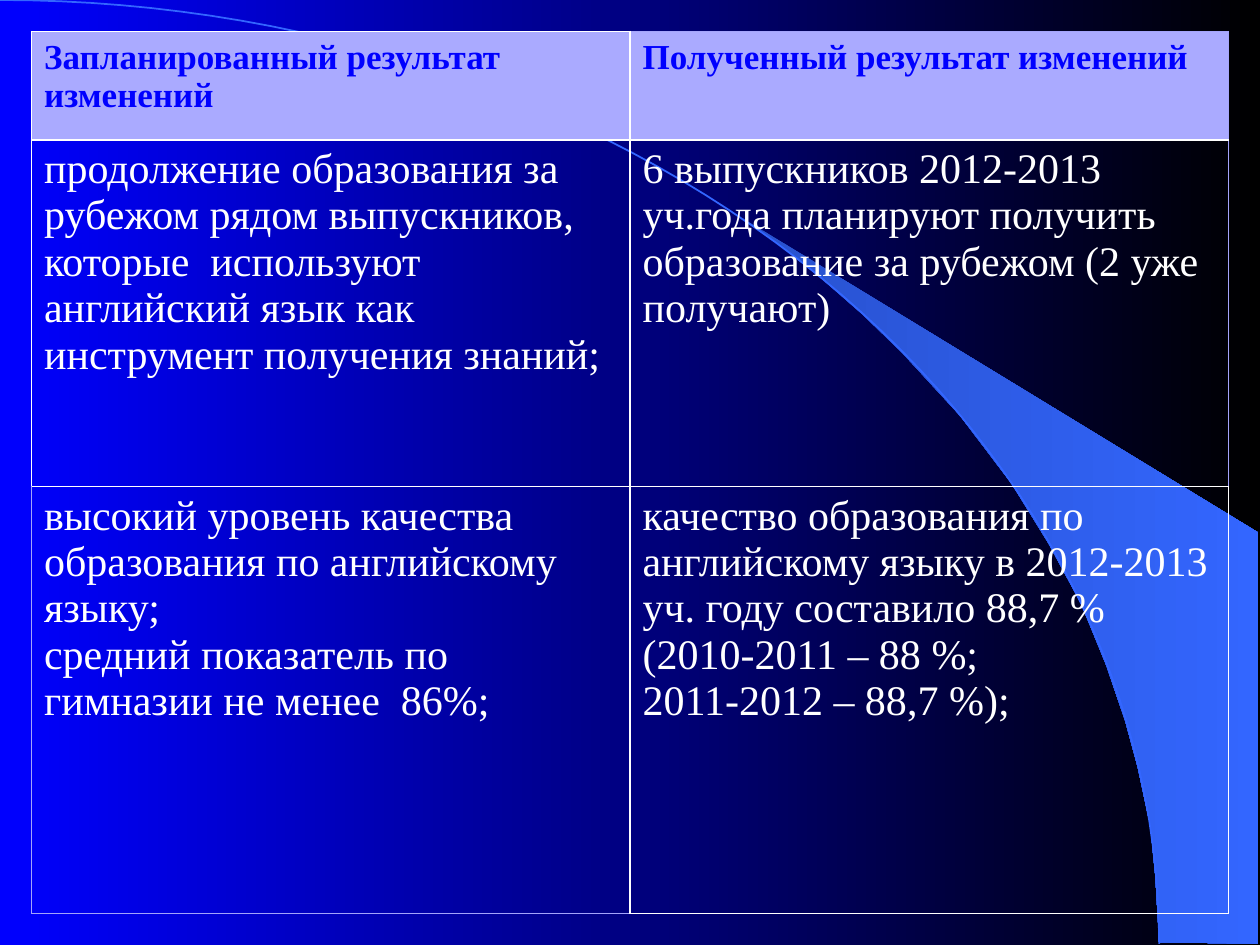
import math

from lxml import etree
from pptx import Presentation
from pptx.dml.color import RGBColor
from pptx.oxml.ns import qn
from pptx.util import Inches, Pt

BLANK_LAYOUT = 6
FONT = "Times New Roman"
COLORS = {
    "blue": "0000FF",
    "black": "000000",
    "white": "FFFFFF",
    "arc": "3366FF",
    "wing": "2851CC",
    "header": "AAAAFF",
    "edge": "A4A4FB",
}

WING = [
    (9.2, 7.48), (9.99, 7.49), (9.99, 4.23), (5.89, 1.73), (6.24, 1.99),
    (6.53, 2.22), (6.85, 2.5), (7.16, 2.8), (7.62, 3.3), (8.03, 3.84),
    (8.32, 4.31), (8.58, 4.79), (8.78, 5.28), (8.93, 5.72), (9.03, 6.09),
    (9.13, 6.56), (9.17, 6.96),
]
ARC_WIDTH, ARC_HEIGHT, ARC_STEPS = 9.2, 7.49, 60

# Each cell is a list of paragraphs
ROWS = [
    [
        ["Запланированный результат изменений"],
        ["Полученный результат изменений"],
    ],
    [
        ["продолжение образования за рубежом рядом выпускников, которые  "
         "используют английский язык как инструмент получения знаний;"],
        ["6 выпускников 2012-2013 уч.года планируют получить образование "
         "за рубежом (2 уже получают)"],
    ],
    [
        ["высокий уровень качества образования по английскому языку;",
         "средний показатель по гимназии не менее  86%;"],
        ["качество образования по английскому языку в 2012-2013 уч. году "
         "составило 88,7 % (2010-2011 – 88 %;",
         "2011-2012 – 88,7 %);"],
    ],
]
ROW_HEIGHTS = [0.86, 2.75, 3.39]
# Sides with the thin lavender line; all others are white
EDGE_SIDES = {(0, 1): "RT", (1, 1): "RT", (2, 0): "LB"}


def rgb(name):
    return RGBColor.from_string(COLORS[name])


class SlideBuilder:
    def __init__(self, slide):
        self.slide = slide

    def gradient(self, fill, first, last):
        fill.gradient()
        fill.gradient_angle = 0
        for stop, name in zip(fill.gradient_stops, (first, last)):
            stop.color.rgb = rgb(name)

    def outline(self, points, close):
        points = [(Inches(x), Inches(y)) for x, y in points]
        builder = self.slide.shapes.build_freeform(*points[0])
        builder.add_line_segments(points[1:], close=close)
        shape = builder.convert_to_shape()
        shape.shadow.inherit = False
        return shape

    def wing(self, points):
        shape = self.outline(points, close=True)
        self.gradient(shape.fill, "wing", "arc")
        shape.line.fill.background()

    def arc(self, width, height):
        angles = [math.pi / 2 * step / ARC_STEPS for step in range(ARC_STEPS + 1)]
        points = [(width * math.sin(a), height * (1 - math.cos(a))) for a in angles]
        shape = self.outline(points, close=False)
        shape.fill.background()
        shape.line.color.rgb = rgb("arc")
        shape.line.width = Pt(1)

    def borders(self, cell, edge_sides):
        properties = cell._tc.get_or_add_tcPr()
        for index, side in enumerate("LRTB"):
            color, width = ("edge", 0.75) if side in edge_sides else ("white", 1)
            line = etree.Element(qn(f"a:ln{side}"), w=str(Pt(width)))
            fill = etree.SubElement(line, qn("a:solidFill"))
            etree.SubElement(fill, qn("a:srgbClr"), val=COLORS[color])
            properties.insert(index, line)

    def cell(self, cell, paragraphs, is_header):
        if is_header:
            cell.fill.solid()
            cell.fill.fore_color.rgb = rgb("header")
        else:
            cell.fill.background()
        cell.text = "\n".join(paragraphs)
        for paragraph in cell.text_frame.paragraphs:
            font = paragraph.font
            font.name = FONT
            font.size = Pt(20 if is_header else 24)
            font.bold = is_header
            font.color.rgb = rgb("blue" if is_header else "white")

    def table(self, rows, left, top, width, heights):
        columns = len(rows[0])
        table = self.slide.shapes.add_table(
            len(rows), columns, Inches(left), Inches(top),
            Inches(width), Inches(sum(heights)),
        ).table
        table.horz_banding = False
        table.first_row = False
        for column in table.columns:
            column.width = Inches(width / columns)
        for row_index, (row, height) in enumerate(zip(rows, heights)):
            table.rows[row_index].height = Inches(height)
            for column_index, paragraphs in enumerate(row):
                cell = table.cell(row_index, column_index)
                self.cell(cell, paragraphs, is_header=row_index == 0)
                self.borders(cell, EDGE_SIDES.get((row_index, column_index), ""))


def main():
    presentation = Presentation()
    presentation.slide_width = Inches(10)
    presentation.slide_height = Inches(7.5)
    slide = presentation.slides.add_slide(presentation.slide_layouts[BLANK_LAYOUT])
    builder = SlideBuilder(slide)

    # Background and decoration
    builder.gradient(slide.background.fill, "blue", "black")
    builder.wing(WING)
    builder.arc(ARC_WIDTH, ARC_HEIGHT)

    # Planned and achieved results
    builder.table(ROWS, 0.25, 0.25, 9.5, ROW_HEIGHTS)

    presentation.save("out.pptx")


if __name__ == "__main__":
    main()
